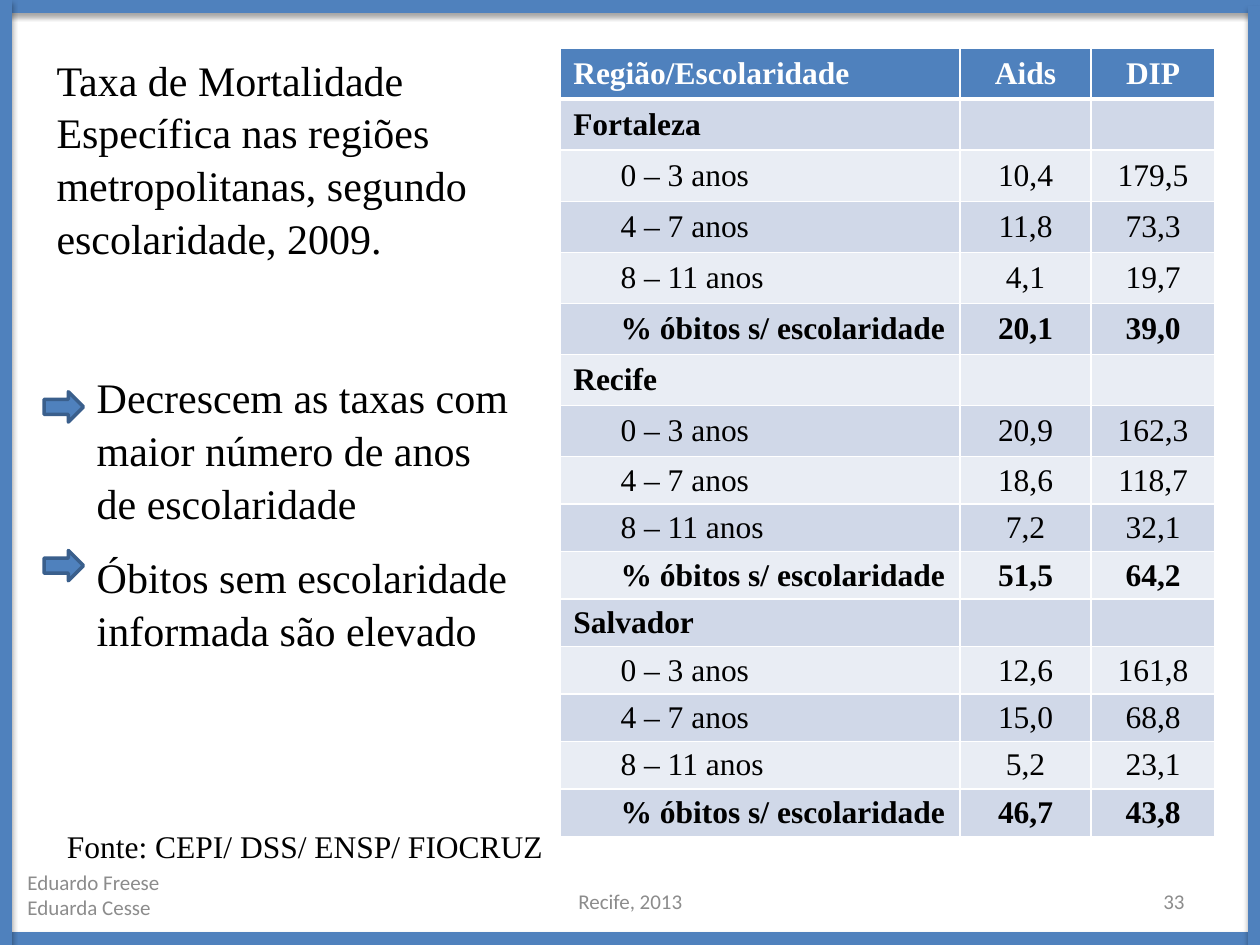
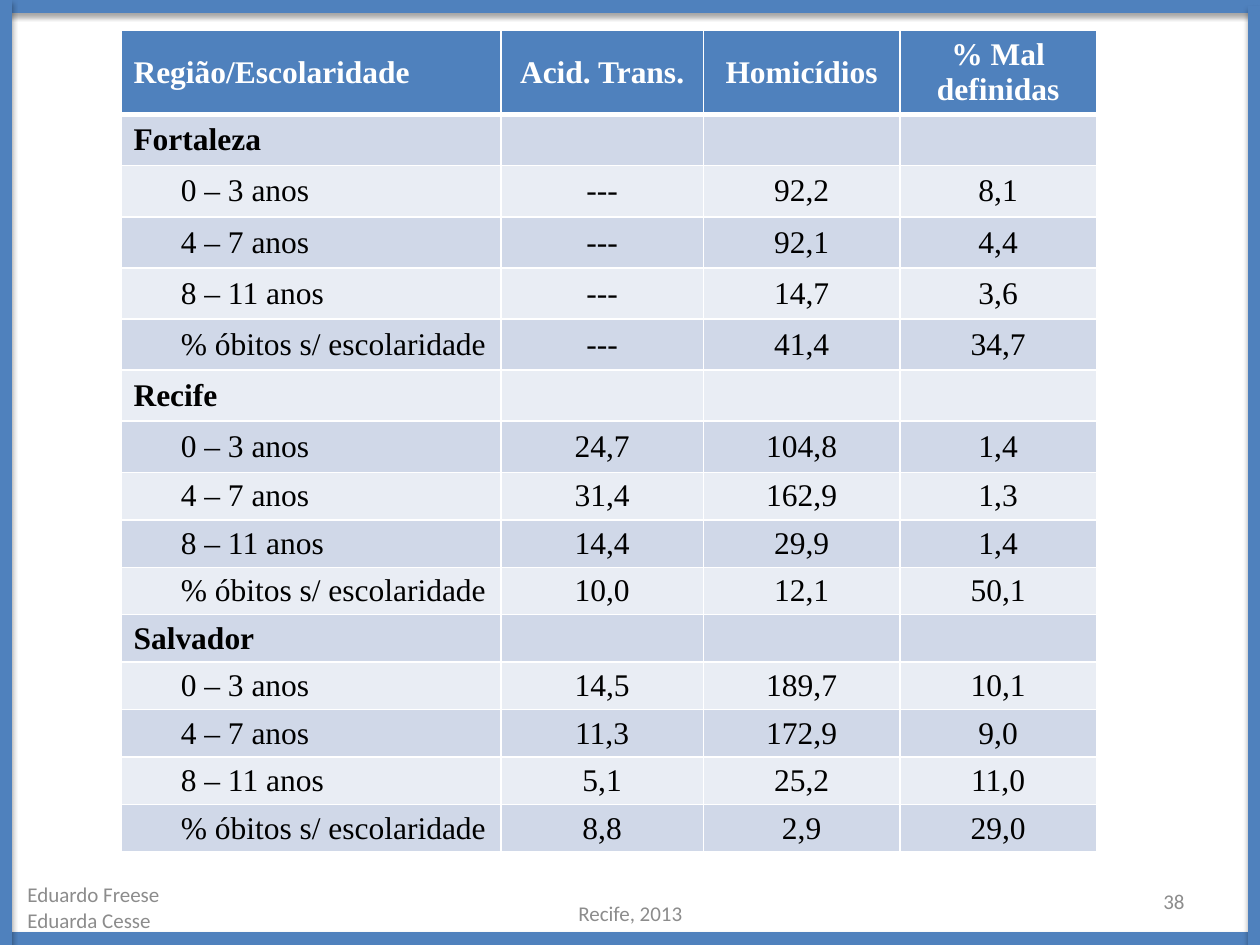
"""Build two slides of mortality rates by schooling, with a shared frame and footers."""
from dataclasses import dataclass

from lxml import etree
from pptx import Presentation
from pptx.dml.color import RGBColor
from pptx.enum import shapes, text
from pptx.oxml import ns
from pptx.util import Pt

COLORS = {
    "blue": "4F81BD",
    "arrow_edge": "3A5F8C",
    "band_dark": "D0D8E8",
    "band_light": "E9EDF4",
    "footer": "8C8C8C",
    "black": "000000",
    "white": "FFFFFF",
}
SERIF, SANS = "Times New Roman", "Calibri"
LEFT, CENTER, RIGHT = text.PP_ALIGN.LEFT, text.PP_ALIGN.CENTER, text.PP_ALIGN.RIGHT
WIDTH, HEIGHT = 720, 540
FRAME_WIDTH = 8
TALL_ROW, SHORT_ROW, TALL_ROWS = 29.2, 27.14, 8
CELL_MARGIN, LABEL_INDENT = 7.2, 27
SCHOOLING = ("0 – 3 anos", "4 – 7 anos", "8 – 11 anos", "% óbitos s/ escolaridade")


@dataclass(frozen=True)
class Box:
    left: float
    top: float
    width: float
    height: float


@dataclass(frozen=True)
class Style:
    size: float
    font: str = SERIF
    color: str = "black"
    bold: bool = False
    align: text.PP_ALIGN = LEFT
    line_spacing: float = 1.0
    space_before: float = 0


@dataclass(frozen=True)
class RateTable:
    left: float
    top: float
    columns: tuple[float, ...]
    header_height: float
    header: tuple[str, ...]
    regions: dict[str, tuple[tuple[str, ...], ...]]
    bold_unknown: bool


@dataclass(frozen=True)
class Footer:
    number: str
    place_top: float
    authors_top: float


BODY = Style(24, line_spacing=1.05)
FOOTER = Style(12, SANS, "footer")
FRAME = (
    (0, 3.6, WIDTH, 3.6),
    (0, 536.4, WIDTH, 536.4),
    (2.9, 0, 2.9, HEIGHT),
    (717.1, 3.6, 717.1, HEIGHT),
)
INFECTIOUS = RateTable(
    320.4, 27.4, (228.2, 74.9, 70.9), TALL_ROW,
    ("Região/Escolaridade", "Aids", "DIP"),
    {
        "Fortaleza": (("10,4", "179,5"), ("11,8", "73,3"), ("4,1", "19,7"), ("20,1", "39,0")),
        "Recife": (("20,9", "162,3"), ("18,6", "118,7"), ("7,2", "32,1"), ("51,5", "64,2")),
        "Salvador": (("12,6", "161,8"), ("15,0", "68,8"), ("5,2", "23,1"), ("46,7", "43,8")),
    },
    True,
)
EXTERNAL = RateTable(
    69.1, 17.3, (217.2, 115.6, 112.4, 112.2), 46.5,
    ("Região/Escolaridade", "Acid. Trans.", "Homicídios", "% Mal definidas"),
    {
        "Fortaleza": (("---", "92,2", "8,1"), ("---", "92,1", "4,4"),
                      ("---", "14,7", "3,6"), ("---", "41,4", "34,7")),
        "Recife": (("24,7", "104,8", "1,4"), ("31,4", "162,9", "1,3"),
                   ("14,4", "29,9", "1,4"), ("10,0", "12,1", "50,1")),
        "Salvador": (("14,5", "189,7", "10,1"), ("11,3", "172,9", "9,0"),
                     ("5,1", "25,2", "11,0"), ("8,8", "2,9", "29,0")),
    },
    False,
)


def rgb(name: str) -> RGBColor:
    return RGBColor.from_string(COLORS[name])


def write(frame, lines: tuple[str, ...], style: Style) -> None:
    for index, line in enumerate(lines):
        paragraph = frame.add_paragraph() if index else frame.paragraphs[0]
        paragraph.alignment = style.align
        paragraph.line_spacing = style.line_spacing
        paragraph.space_before = Pt(style.space_before if index else 0)
        run = paragraph.add_run()
        run.text = line
        run.font.size = Pt(style.size)
        run.font.name = style.font
        run.font.bold = style.bold
        run.font.color.rgb = rgb(style.color)


def add_text(slide, box: Box, lines: tuple[str, ...], style: Style,
             anchor: text.MSO_ANCHOR = text.MSO_ANCHOR.TOP) -> None:
    shape = slide.shapes.add_textbox(Pt(box.left), Pt(box.top), Pt(box.width), Pt(box.height))
    shape.text_frame.word_wrap = True
    shape.text_frame.vertical_anchor = anchor
    write(shape.text_frame, lines, style)


def add_element(parent, tag: str, **attributes: str):
    return etree.SubElement(parent, ns.qn(tag), attributes)


def add_frame_line(slide, ends: tuple[float, ...]) -> None:
    line = slide.shapes.add_connector(shapes.MSO_CONNECTOR.STRAIGHT, *(Pt(end) for end in ends))
    line.line.color.rgb = rgb("blue")
    line.line.width = Pt(FRAME_WIDTH)
    effects = add_element(line._element.spPr, "a:effectLst")
    shadow = add_element(effects, "a:outerShdw", blurRad=str(Pt(3.1)), dist=str(Pt(1.8)),
                         dir="5400000", rotWithShape="0")
    color = add_element(shadow, "a:srgbClr", val=COLORS["black"])
    add_element(color, "a:alpha", val="35000")


def add_base(presentation, footer: Footer):
    slide = presentation.slides.add_slide(presentation.slide_layouts[6])
    middle = text.MSO_ANCHOR.MIDDLE
    place = Style(12, SANS, "footer", align=CENTER)
    number = Style(12, SANS, "footer", align=RIGHT)
    add_text(slide, Box(246.2, footer.place_top, 228.2, 28.8), ("Recife, 2013",), place, middle)
    add_text(slide, Box(516.2, 500.4, 167.8, 28.8), (footer.number,), number, middle)
    for ends in FRAME:
        add_frame_line(slide, ends)
    add_text(slide, Box(8.6, footer.authors_top, 228.2, 28.8),
             ("Eduardo Freese", "Eduarda Cesse"), FOOTER, middle)
    return slide


def add_borders(cell, bottom: float) -> None:
    properties = cell._tc.get_or_add_tcPr()
    for side, width in (("L", 1), ("R", 1), ("T", 1), ("B", bottom)):
        border = add_element(properties, f"a:ln{side}", w=str(Pt(width)))
        add_element(add_element(border, "a:solidFill"), "a:srgbClr", val=COLORS["white"])


def fill_cell(cell, value: str, style: Style, fill: str, indent: float, border: float) -> None:
    add_borders(cell, border)
    cell.fill.solid()
    cell.fill.fore_color.rgb = rgb(fill)
    cell.vertical_anchor = text.MSO_ANCHOR.MIDDLE
    cell.margin_left = Pt(CELL_MARGIN + indent)
    cell.margin_right = Pt(CELL_MARGIN if style.align == CENTER else CELL_MARGIN / 2)
    cell.margin_top = cell.margin_bottom = Pt(2.5)
    if value:
        write(cell.text_frame, (value,), style)


def add_rates(slide, rates: RateTable) -> None:
    blanks = ("",) * (len(rates.columns) - 1)
    rows = [(rates.header, True, 0)]
    for region, values in rates.regions.items():
        rows.append(((region, *blanks), True, 0))
        for label, row_values in zip(SCHOOLING, values):
            bold = rates.bold_unknown and label == SCHOOLING[-1]
            rows.append(((label, *row_values), bold, LABEL_INDENT))
    heights = [rates.header_height] + [
        TALL_ROW if index < TALL_ROWS else SHORT_ROW for index in range(1, len(rows))]
    table = slide.shapes.add_table(
        len(rows), len(rates.columns), Pt(rates.left), Pt(rates.top),
        Pt(sum(rates.columns)), Pt(sum(heights))).table
    table.first_row = table.horz_banding = False
    for column, width in zip(table.columns, rates.columns):
        column.width = Pt(width)
    for index, (values, bold, indent) in enumerate(rows):
        table.rows[index].height = Pt(heights[index])
        is_header = index == 0
        fill = "blue" if is_header else ("band_light", "band_dark")[index % 2]
        for position, value in enumerate(values):
            style = Style(18, color="white" if is_header else "black", bold=bold,
                          align=CENTER if position else LEFT)
            fill_cell(table.cell(index, position), value, style, fill,
                      0 if position else indent, 3 if is_header else 1)


def add_arrow(slide, top: float) -> None:
    arrow = slide.shapes.add_shape(
        shapes.MSO_SHAPE.RIGHT_ARROW, Pt(25.2), Pt(top), Pt(22.5), Pt(17.3))
    arrow.shadow.inherit = False
    arrow.fill.solid()
    arrow.fill.fore_color.rgb = rgb("blue")
    arrow.line.color.rgb = rgb("arrow_edge")
    arrow.line.width = Pt(2)


def build_infectious(presentation) -> None:
    slide = add_base(presentation, Footer("33", 500.4, 496.8))
    add_rates(slide, INFECTIOUS)
    add_text(slide, Box(14.4, 468, 303, 28.8), ("Fonte: CEPI/ DSS/ ENSP/ FIOCRUZ",),
             Style(18, align=RIGHT, line_spacing=1.05))
    add_text(slide, Box(25.2, 25.9, 289.4, 123.8),
             ("Taxa de Mortalidade Específica nas regiões metropolitanas, "
              "segundo escolaridade, 2009.",), BODY)
    add_text(slide, Box(48.2, 207.4, 252, 164.9),
             ("Decrescem as taxas com maior número de anos de escolaridade",
              "Óbitos sem escolaridade informada são elevado"),
             Style(24, line_spacing=1.05, space_before=12))
    for top in (223.9, 314.6):
        add_arrow(slide, top)


def build_external(presentation) -> None:
    slide = add_base(presentation, Footer("38", 507.6, 504))
    add_rates(slide, EXTERNAL)


def main() -> None:
    presentation = Presentation()
    presentation.slide_width, presentation.slide_height = Pt(WIDTH), Pt(HEIGHT)
    build_infectious(presentation)
    build_external(presentation)
    presentation.save("out.pptx")


if __name__ == "__main__":
    main()
